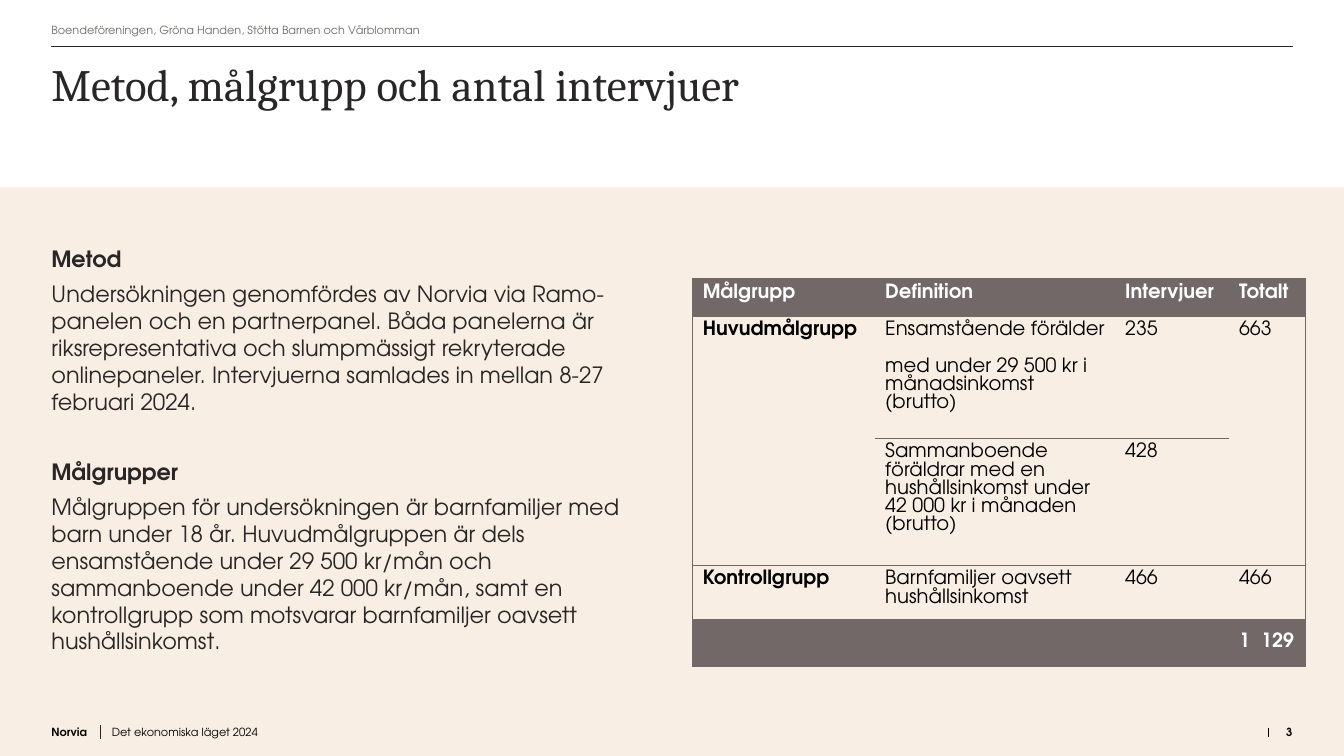
from lxml import etree
from pptx import Presentation
from pptx.dml.color import RGBColor
from pptx.enum import shapes, text
from pptx.oxml import ns
from pptx.util import Inches, Pt

SANS, SERIF = "TeX Gyre Adventor", "Cambria"
CREAM, WHITE, BLACK, INK, TAUPE = "F9EEE3", "FFFFFF", "000000", "282626", "736868"
MARGIN = 0.51

METHOD = ("Undersökningen genomfördes av Norvia via Ramo-panelen och en partnerpanel. "
          "Båda panelerna är riksrepresentativa och slumpmässigt rekryterade onlinepaneler. "
          "Intervjuerna samlades in mellan 8-27 februari 2024.")
GROUPS = ("Målgruppen för undersökningen är barnfamiljer med barn under 18 år. "
          "Huvudmålgruppen är dels ensamstående under 29 500 kr/mån och sammanboende "
          "under 42 000 kr/mån, samt en kontrollgrupp som motsvarar barnfamiljer "
          "oavsett hushållsinkomst.")

COLUMNS = [1.81, 2.38, 1.13, 0.76]
HEIGHTS = [0.38, 1.21, 1.26, 0.53, 0.47]
ROWS = [
    ["Målgrupp", "Definition", "Intervjuer", "Totalt"],
    ["Huvudmålgrupp",
     "Ensamstående förälder\nmed under 29 500 kr i månadsinkomst (brutto)", "235", "663"],
    ["", "Sammanboende föräldrar med en hushållsinkomst under 42 000 kr i månaden (brutto)",
     "428", ""],
    ["Kontrollgrupp", "Barnfamiljer oavsett hushållsinkomst", "466", "466"],
    ["", "", "", "1  129"],
]


def rgb(colour):
    return RGBColor.from_string(colour)


def place(shape, left, top, width, height):
    shape.left, shape.top = Inches(left), Inches(top)
    shape.width, shape.height = Inches(width), Inches(height)


def set_frame(frame, anchor=text.MSO_ANCHOR.TOP, top=0, bottom=0):
    frame.word_wrap = True
    frame.auto_size = text.MSO_AUTO_SIZE.NONE
    frame.vertical_anchor = anchor
    frame.margin_left = frame.margin_right = 0
    frame.margin_top, frame.margin_bottom = Inches(top), Inches(bottom)


def write(paragraph, words, size, colour, bold=False, font=SANS, before=0, after=0):
    paragraph.line_spacing = 1.0
    paragraph.space_before, paragraph.space_after = Pt(before), Pt(after)
    run = paragraph.add_run()
    run.text = words
    run.font.name, run.font.size, run.font.bold = font, Pt(size), bold
    run.font.color.rgb = rgb(colour)


def remove_bullet(paragraph):
    props = paragraph._p.get_or_add_pPr()
    props.set("marL", "0")
    props.set("indent", "0")
    etree.SubElement(props, ns.qn("a:buNone"))


def add_rule(slide, start, end, colour):
    rule = slide.shapes.add_connector(
        shapes.MSO_CONNECTOR.STRAIGHT, *[Inches(value) for value in start + end])
    rule.line.color.rgb = rgb(colour)
    rule.line.width = Pt(0.5)
    etree.SubElement(rule._element.spPr, ns.qn("a:effectLst"))


def add_footer(slide, left, width, words, bold=False, align=text.PP_ALIGN.LEFT):
    box = slide.shapes.add_textbox(Inches(left), Inches(7.16), Inches(width), Inches(0.17))
    set_frame(box.text_frame, text.MSO_ANCHOR.BOTTOM)
    paragraph = box.text_frame.paragraphs[0]
    paragraph.alignment = align
    write(paragraph, words, 8, BLACK, bold)


def add_header_band(slide):
    band = slide.shapes.add_shape(
        shapes.MSO_SHAPE.RECTANGLE, 0, 0, Inches(13.33), Inches(1.86))
    band.shadow.inherit = False
    band.fill.solid()
    band.fill.fore_color.rgb = rgb(WHITE)
    band.line.fill.background()
    slide.shapes._spTree.insert(2, band._element)  # behind the placeholders


def fill_body(body):
    place(body, MARGIN, 2.43, 12.44, 4.27)
    frame = body.text_frame
    set_frame(frame)
    columns = frame._txBody.bodyPr
    columns.set("numCol", "2")
    columns.set("spcCol", str(Inches(0.39)))
    for number, (heading, details) in enumerate([("Metod", METHOD), ("Målgrupper", GROUPS)]):
        first = frame.add_paragraph() if number else frame.paragraphs[0]
        write(first, heading, 16, INK, True, before=25 * number, after=6)
        write(frame.add_paragraph(), details, 16, INK, after=6)
    for paragraph in frame.paragraphs:
        remove_bullet(paragraph)


def set_borders(cell, sides):
    """Draw the named sides (of L, R, T, B) and clear the others."""
    props = cell._tc.get_or_add_tcPr()
    for index, side in enumerate("LRTB"):
        border = etree.Element(ns.qn(f"a:ln{side}"), w=str(Pt(0.5)))
        if side in sides:
            solid = etree.SubElement(border, ns.qn("a:solidFill"))
            etree.SubElement(solid, ns.qn("a:srgbClr"), val=TAUPE)
        else:
            etree.SubElement(border, ns.qn("a:noFill"))
        props.insert(index, border)


def add_interview_table(slide):
    table = slide.shapes.add_table(
        len(ROWS), len(COLUMNS), Inches(6.87), Inches(2.76),
        Inches(sum(COLUMNS)), Inches(sum(HEIGHTS))).table
    for column, width in zip(table.columns, COLUMNS):
        column.width = Inches(width)
    last_row, last_column = len(ROWS) - 1, len(COLUMNS) - 1
    for r, (row, height) in enumerate(zip(ROWS, HEIGHTS)):
        table.rows[r].height = Inches(height)
        dark = r in (0, last_row)
        for c, words in enumerate(row):
            cell = table.cell(r, c)
            if dark:
                cell.fill.solid()
                cell.fill.fore_color.rgb = rgb(TAUPE)
            else:
                cell.fill.background()
            if c == 1:
                cell.margin_right = Inches(0.05)
            cell.margin_top = cell.margin_bottom = Inches(0.05 if r else 0.06)
            if r == last_row:
                cell.vertical_anchor = text.MSO_ANCHOR.MIDDLE
            for n, line in enumerate(words.split("\n") if words else []):
                frame = cell.text_frame
                paragraph = frame.add_paragraph() if n else frame.paragraphs[0]
                write(paragraph, line, 14, WHITE if dark else BLACK, dark or c == 0,
                      before=13 * n)
            merged = c in (0, last_column)
            sides = {0: "L", last_column: "R"}.get(c, "")
            sides += "" if merged and r == 2 else "T"
            sides += "" if merged and r == 1 else "B"
            set_borders(cell, sides)
    for c in (0, last_column):
        table.cell(1, c).merge(table.cell(2, c))


def main():
    deck = Presentation()
    deck.slide_width, deck.slide_height = Inches(13.33), Inches(7.5)
    slide = deck.slides.add_slide(deck.slide_layouts[3])
    slide.background.fill.solid()
    slide.background.fill.fore_color.rgb = rgb(CREAM)
    title, body, clients = slide.placeholders

    add_header_band(slide)
    add_rule(slide, (MARGIN, 0.46), (12.82, 0.46), INK)
    add_rule(slide, (1, 7.33), (1, 7.19), INK)
    add_rule(slide, (12.58, 7.22), (12.58, 7.31), BLACK)

    place(title, MARGIN, 0.46, 12.32, 0.71)
    set_frame(title.text_frame, top=0.1)
    heading = title.text_frame.paragraphs[0]
    heading.alignment = text.PP_ALIGN.LEFT
    write(heading, "Metod, målgrupp och antal intervjuer", 32, INK, font=SERIF, after=6)

    place(clients, MARGIN, 0.19, 12.32, 0.21)
    set_frame(clients.text_frame, text.MSO_ANCHOR.MIDDLE, 0.04, 0.04)
    names = clients.text_frame.paragraphs[0]
    write(names, "Boendeföreningen, Gröna Handen, Stötta Barnen och Vårblomman", 8, TAUPE)
    remove_bullet(names)

    fill_body(body)
    add_interview_table(slide)
    add_footer(slide, MARGIN, 0.48, "Norvia", True)
    add_footer(slide, 1.11, 7.8, "Det ekonomiska läget 2024")
    add_footer(slide, 12.58, 0.24, "3", True, text.PP_ALIGN.RIGHT)
    deck.save("out.pptx")


if __name__ == "__main__":
    main()
